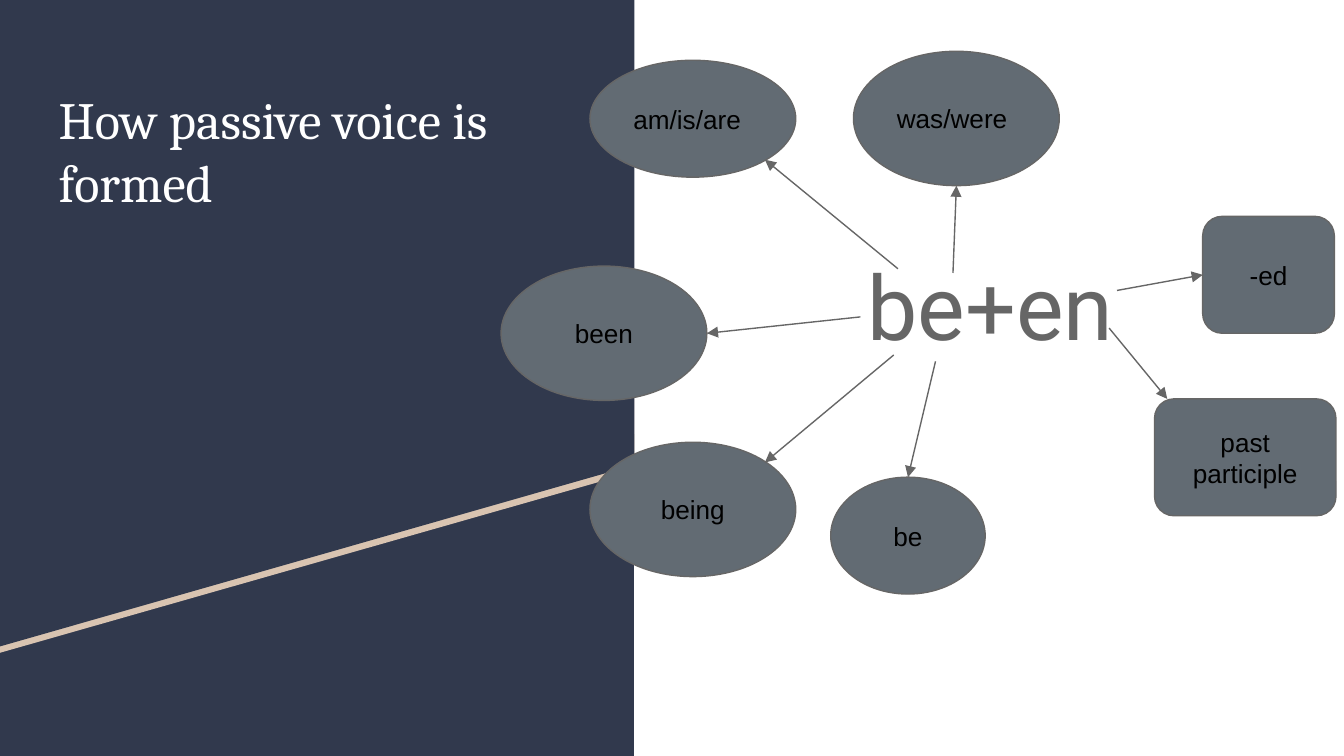
from dataclasses import dataclass

from lxml.etree import SubElement
from pptx import Presentation
from pptx.dml.color import RGBColor
from pptx.enum.shapes import MSO_CONNECTOR, MSO_SHAPE
from pptx.enum.text import MSO_ANCHOR, PP_ALIGN
from pptx.oxml.ns import qn
from pptx.util import Cm, Pt


@dataclass(frozen=True)
class Theme:
    navy: str = "31394D"
    sand: str = "D9C4B1"
    slate: str = "626B73"
    grey: str = "666666"
    white: str = "FFFFFF"
    black: str = "000000"
    title_size: float = 28
    formula_size: float = 48
    node_size: float = 14
    line_width: float = 0.75


THEME = Theme()
SLIDE_SIZE = (25.4, 14.29)
PANEL_WIDTH = 11.99
INSET = 0.25

TITLE = ("How passive voice is formed", (0.86, 1.4, 10.29, 6.96))
FORMULA = ("be+en", (12.93, 4.5, 11.58, 2.5))

PANEL_LAYERS = [
    (THEME.navy, [(0, 0), (PANEL_WIDTH, 0), (PANEL_WIDTH, SLIDE_SIZE[1]), (0, SLIDE_SIZE[1])]),
    (THEME.sand, [(0, 0.13), (11.96, 0.13), (PANEL_WIDTH, 8.92), (0, 12.34)]),
    (THEME.navy, [(0, 0), (PANEL_WIDTH, 0), (PANEL_WIDTH, 8.79), (0, 12.22)]),
]

OVAL, CARD = MSO_SHAPE.OVAL, MSO_SHAPE.ROUNDED_RECTANGLE
LEFT, CENTER = PP_ALIGN.LEFT, PP_ALIGN.CENTER

# label, outline, alignment, box, arrow start, arrow end as a share of the box
NODES = [
    ("am/is/are", OVAL, LEFT, (11.15, 1.14, 3.89, 2.21), (16.97, 5.08), (0.85, 0.85)),
    ("was/were", OVAL, LEFT, (16.13, 0.97, 3.89, 2.54), (18.01, 5.16), (0.5, 1)),
    ("been", OVAL, CENTER, (9.47, 5.03, 3.89, 2.54), (16.26, 5.99), (1, 0.5)),
    ("being", OVAL, CENTER, (11.15, 8.36, 3.89, 2.54), (16.89, 6.71), (0.85, 0.15)),
    ("be", OVAL, CENTER, (15.7, 9.02, 2.92, 2.21), (17.68, 6.83), (0.5, 0)),
    ("-ed", CARD, CENTER, (22.73, 4.09, 2.49, 2.21), (21.11, 5.49), (0, 0.5)),
    ("past participle", CARD, CENTER, (21.82, 7.54, 3.43, 2.21), (20.96, 6.2), (0.07, 0)),
]


def lengths(values):
    return [Cm(value) for value in values]


def color(code):
    return RGBColor.from_string(code)


def write(holder, text, *, font, size, ink, align=LEFT, anchor=MSO_ANCHOR.TOP):
    frame = holder.text_frame
    frame.word_wrap = True
    frame.vertical_anchor = anchor
    frame.margin_left = frame.margin_right = Cm(INSET)
    frame.margin_top = frame.margin_bottom = Cm(INSET)
    paragraph = frame.paragraphs[0]
    paragraph.alignment = align
    run = paragraph.add_run()
    run.text = text
    run.font.name = font
    run.font.size = Pt(size)
    run.font.color.rgb = color(ink)


def add_layer(slide, fill, corners):
    points = [tuple(lengths(corner)) for corner in corners]
    builder = slide.shapes.build_freeform(*points[0])
    builder.add_line_segments(points[1:], close=True)
    layer = builder.convert_to_shape()
    layer.shadow.inherit = False
    layer.fill.solid()
    layer.fill.fore_color.rgb = color(fill)
    layer.line.fill.background()


def add_node(slide, label, outline, align, box):
    node = slide.shapes.add_shape(outline, *lengths(box))
    node.shadow.inherit = False
    node.fill.solid()
    node.fill.fore_color.rgb = color(THEME.slate)
    node.line.color.rgb = color(THEME.grey)
    node.line.width = Pt(THEME.line_width)
    write(node, label, font="Arial", size=THEME.node_size, ink=THEME.black,
          align=align, anchor=MSO_ANCHOR.MIDDLE)


def add_arrow(slide, start, box, share):
    left, top, width, height = box
    end = (left + width * share[0], top + height * share[1])
    arrow = slide.shapes.add_connector(MSO_CONNECTOR.STRAIGHT, *lengths(start + end))
    arrow.line.color.rgb = color(THEME.grey)
    arrow.line.width = Pt(THEME.line_width)
    SubElement(arrow.line._get_or_add_ln(), qn("a:tailEnd"), type="triangle")
    SubElement(arrow._element.spPr, qn("a:effectLst"))


def main():
    deck = Presentation()
    deck.slide_width, deck.slide_height = lengths(SLIDE_SIZE)
    slide = deck.slides.add_slide(deck.slide_layouts[6])

    for fill, corners in PANEL_LAYERS:
        add_layer(slide, fill, corners)

    title, title_box = TITLE
    write(slide.shapes.add_textbox(*lengths(title_box)), title,
          font="Cambria", size=THEME.title_size, ink=THEME.white)
    formula, formula_box = FORMULA
    write(slide.shapes.add_textbox(*lengths(formula_box)), formula,
          font="Roboto", size=THEME.formula_size, ink=THEME.grey, align=CENTER)

    for label, outline, align, box, start, share in NODES:
        add_node(slide, label, outline, align, box)
        add_arrow(slide, start, box, share)

    deck.save("out.pptx")


if __name__ == "__main__":
    main()
